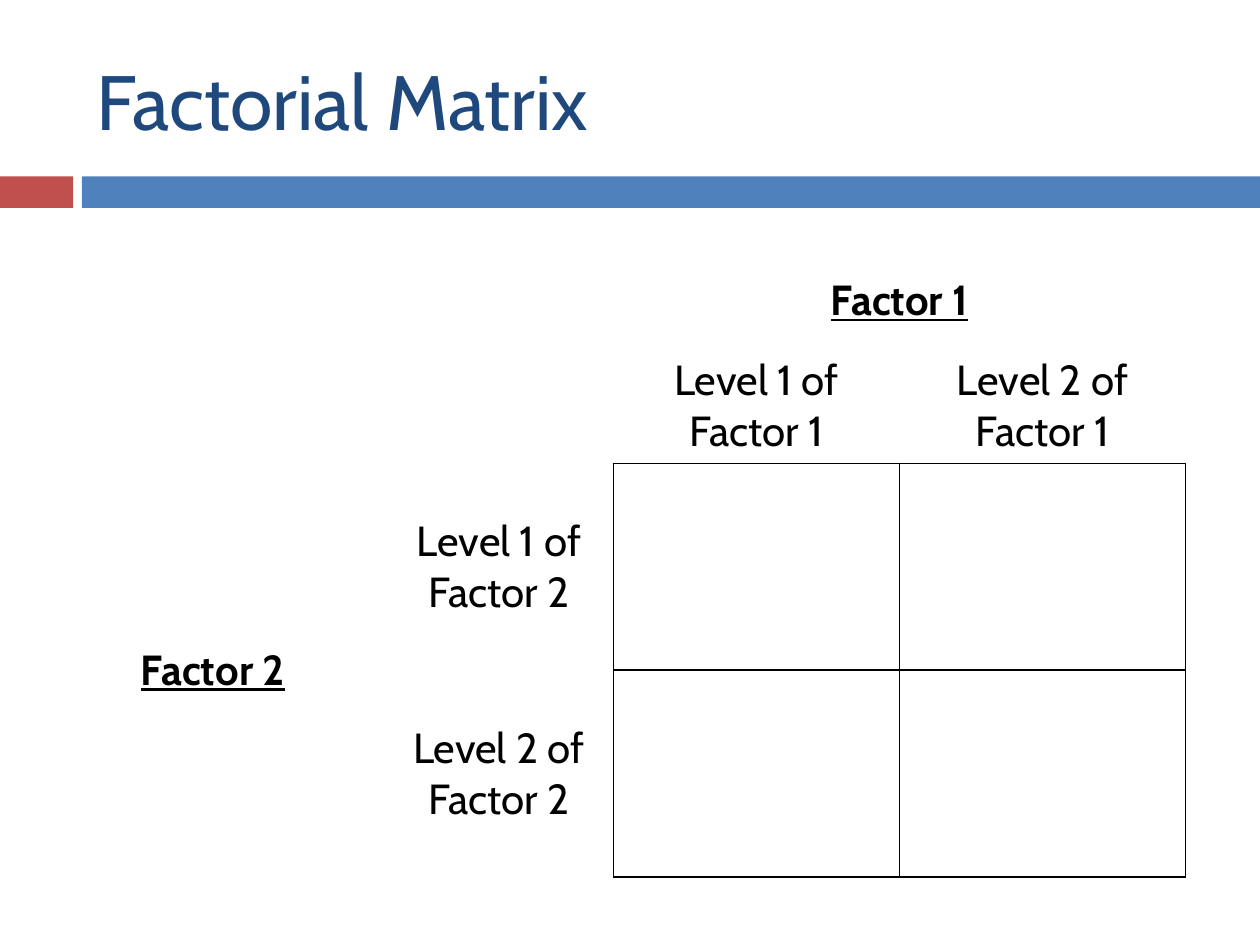
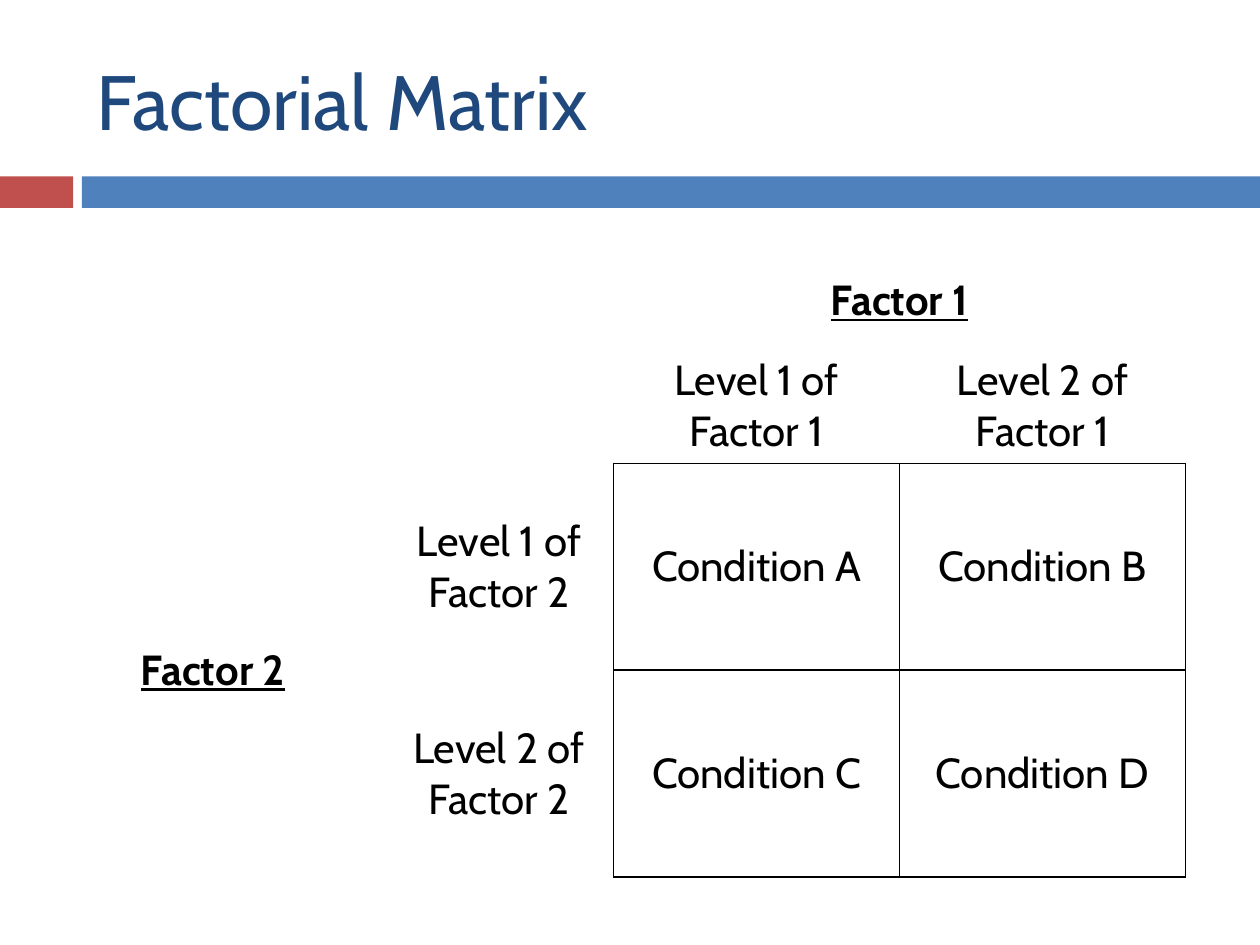
from pptx import Presentation
from pptx.dml.color import RGBColor
from pptx.enum.shapes import MSO_SHAPE
from pptx.enum.text import MSO_ANCHOR, PP_ALIGN
from pptx.oxml.ns import qn
from pptx.util import Inches, Pt
from lxml import etree

RECT = MSO_SHAPE.RECTANGLE
MIDDLE = MSO_ANCHOR.MIDDLE
LEFT, CENTER = PP_ALIGN.LEFT, PP_ALIGN.CENTER

FONT = "Cabin"
BLACK = RGBColor(0x00, 0x00, 0x00)
NAVY = RGBColor(0x1F, 0x49, 0x7D)
BLUE = RGBColor(0x4F, 0x81, 0xBD)
RED = RGBColor(0xC0, 0x50, 0x4D)
NO_GRID = "{2D5ABB26-0587-4C30-8999-92F81FD0307C}"

# Left edge, width and colour of each band under the title
BANDS = [(0, 0.58, RED), (0.65, 9.35, BLUE)]

# Matrix grid
COLS = [2.72, 1.82, 2.27, 2.27]
ROWS = [0.77, 0.91, 1.64, 1.64]
LABELS = {
    (1, 2): "Level 1 of Factor 1",
    (1, 3): "Level 2 of Factor 1",
    (2, 1): "Level 1 of Factor 2",
    (3, 1): "Level 2 of Factor 2",
}
HEADS = {(0, 2): "Factor 1", (2, 0): "Factor 2"}
NAMES = {
    (2, 2): "Condition A",
    (2, 3): "Condition B",
    (3, 2): "Condition C",
    (3, 3): "Condition D",
}


def write(frame, text, size=24, color=BLACK, align=CENTER, strong=False):
    frame.word_wrap = True
    para = frame.paragraphs[0]
    para.alignment = align
    run = para.add_run()
    run.text = text
    font = run.font
    font.name, font.size = FONT, Pt(size)
    font.bold = font.underline = strong
    font.color.rgb = color


def border(cell, sides):
    props = cell._tc.get_or_add_tcPr()
    for side in sides:
        line = etree.SubElement(props, qn(f"a:ln{side}"), w=str(Pt(1)))
        fill = etree.SubElement(line, qn("a:solidFill"))
        etree.SubElement(fill, qn("a:srgbClr"), val=str(BLACK))


deck = Presentation()
deck.slide_width, deck.slide_height = Inches(10), Inches(7.5)
blank = deck.slide_layouts[6]

# First slide shows the empty matrix, second one names its conditions
for names in ({}, NAMES):
    slide = deck.slides.add_slide(blank)

    # Bands
    for left, width, color in BANDS:
        band = slide.shapes.add_shape(
            RECT, Inches(left), Inches(1.4), Inches(width), Inches(0.25))
        band.shadow.inherit = False
        band.fill.solid()
        band.fill.fore_color.rgb = color
        band.line.fill.background()

    # Title
    title = slide.shapes.add_textbox(
        Inches(0.67), Inches(0.25), Inches(8.92), Inches(1.08))
    title.text_frame.vertical_anchor = MIDDLE
    write(title.text_frame, "Factorial Matrix", size=44, color=NAVY, align=LEFT)

    # Table without style bands
    table = slide.shapes.add_table(
        len(ROWS), len(COLS), Inches(0.33), Inches(2),
        Inches(sum(COLS)), Inches(sum(ROWS))).table
    table.first_row = table.horz_banding = False
    table._tbl.tblPr.find(qn("a:tableStyleId")).text = NO_GRID
    for col, width in zip(table.columns, COLS):
        col.width = Inches(width)
    for row, height in zip(table.rows, ROWS):
        row.height = Inches(height)
    table.cell(0, 2).merge(table.cell(0, 3))
    table.cell(2, 0).merge(table.cell(3, 0))

    # Cells: rules surround the conditions only
    texts = {**HEADS, **LABELS, **names}
    for r in range(len(ROWS)):
        for c in range(len(COLS)):
            cell = table.cell(r, c)
            if r >= 2 and c >= 2:
                border(cell, "LRTB")
            elif r == 1 and c >= 2:
                border(cell, "B")
            elif r >= 2 and c == 1:
                border(cell, "R")
            cell.fill.background()
            cell.vertical_anchor = MIDDLE
            if (r, c) in texts:
                write(cell.text_frame, texts[r, c], strong=(r, c) in HEADS)

deck.save("out.pptx")
